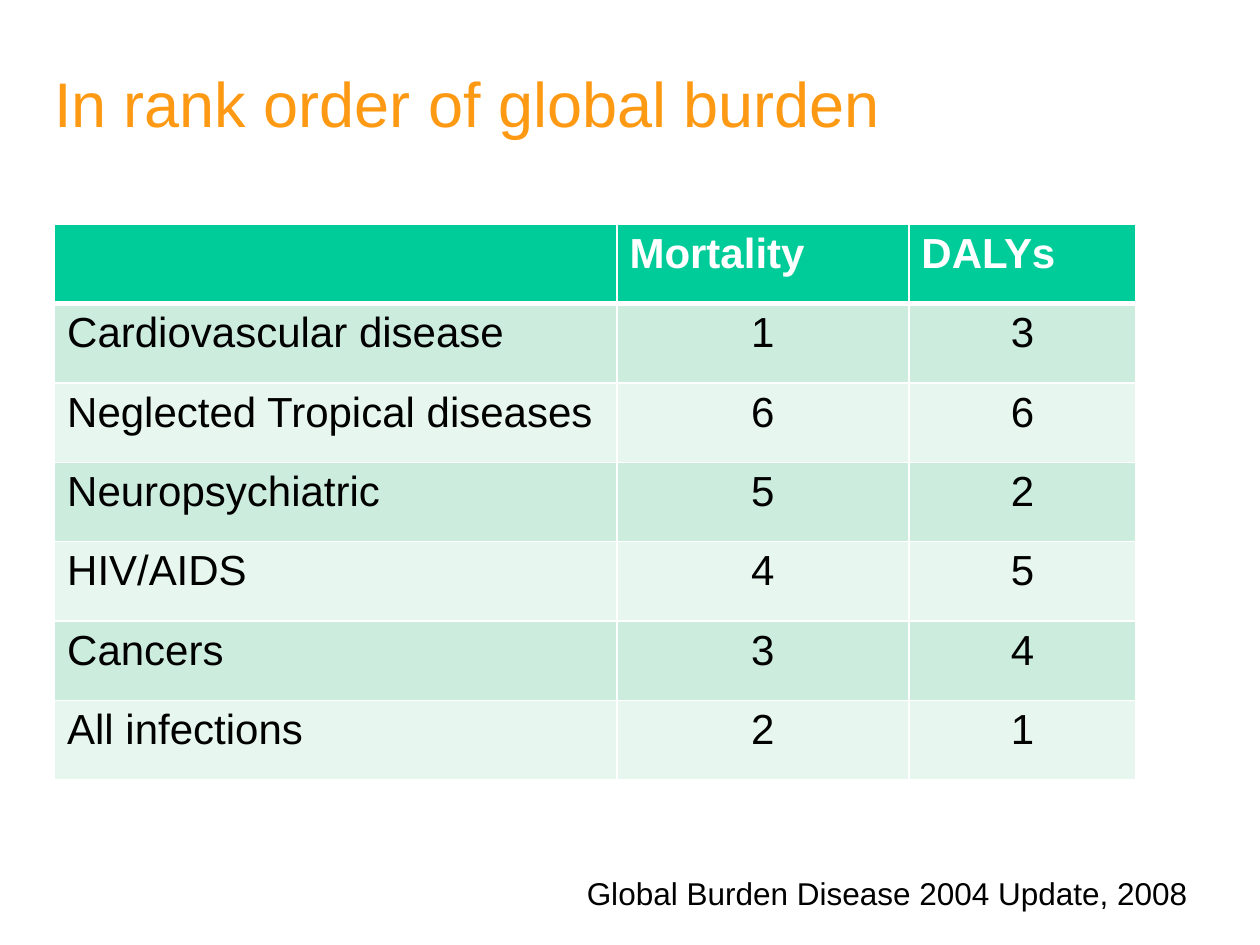
from lxml.etree import SubElement as Sub
from pptx import Presentation
from pptx.dml.color import RGBColor
from pptx.enum.text import MSO_ANCHOR as Anchor, PP_ALIGN as Align
from pptx.oxml.ns import qn
from pptx.util import Cm, Pt

WHITE, BLACK, ORANGE, GREEN = "FFFFFF", "000000", "FE9914", "00CC99"
BANDS = ["CCECDE", "E7F6EF"]
HEAD = ["", "Mortality", "DALYs"]
RANKS = [
    ["Cardiovascular disease", 1, 3],
    ["Neglected Tropical diseases", 6, 6],
    ["Neuropsychiatric", 5, 2],
    ["HIV/AIDS", 4, 5],
    ["Cancers", 3, 4],
    ["All infections", 2, 1],
]
SHARES = [0.52, 0.27, 0.21]


def paint(hue):
    return RGBColor.from_string(hue)


def write(para, text, size, hue, bold=False, align=Align.LEFT):
    para.text = str(text)
    para.alignment = align
    font = para.font
    font.name, font.size, font.bold = "Arial", Pt(size), bold
    font.color.rgb = paint(hue)


def add_text(slide, box, text, size, hue, anchor=Anchor.TOP):
    frame = slide.shapes.add_textbox(*map(Cm, box)).text_frame
    frame.word_wrap = True
    frame.vertical_anchor = anchor
    write(frame.paragraphs[0], text, size, hue)


def add_edges(cell, top, base):
    props = cell._tc.get_or_add_tcPr()
    for side, width in zip("LRTB", (1, 1, top, base)):
        line = Sub(props, qn("a:ln" + side), w=str(Pt(width)))
        Sub(Sub(line, qn("a:solidFill")), qn("a:srgbClr"), val=WHITE)


def add_ranks(slide, box):
    rows = [HEAD] + RANKS
    width, height = box[2:]
    grid = slide.shapes.add_table(len(rows), len(HEAD), *map(Cm, box)).table
    for col, share in zip(grid.columns, SHARES):
        col.width = Cm(width * share)
    for r, row in enumerate(rows):
        grid.rows[r].height = Cm(height / len(rows))
        head = r == 0
        for c, text in enumerate(row):
            cell = grid.cell(r, c)
            add_edges(cell, 3 if r == 1 else 1, 3 if head else 1)
            cell.fill.solid()
            cell.fill.fore_color.rgb = paint(GREEN if head else BANDS[(r - 1) % 2])
            align = Align.LEFT if head or c == 0 else Align.CENTER
            write(cell.text_frame.paragraphs[0], text, 24,
                  WHITE if head else BLACK, head, align)


def main():
    deck = Presentation()
    deck.slide_width, deck.slide_height = Cm(25.4), Cm(19.05)
    slide = deck.slides.add_slide(deck.slide_layouts[6])
    add_text(slide, (0.84, 0.48, 21.59, 3.18), "In rank order of global burden",
             36, ORANGE, Anchor.MIDDLE)
    add_ranks(slide, (1.1, 4.52, 21.8, 11.2))
    add_text(slide, (11.58, 17.5, 12.93, 1.02),
             "Global Burden Disease 2004 Update, 2008", 18, BLACK)
    deck.save("out.pptx")


if __name__ == "__main__":
    main()
